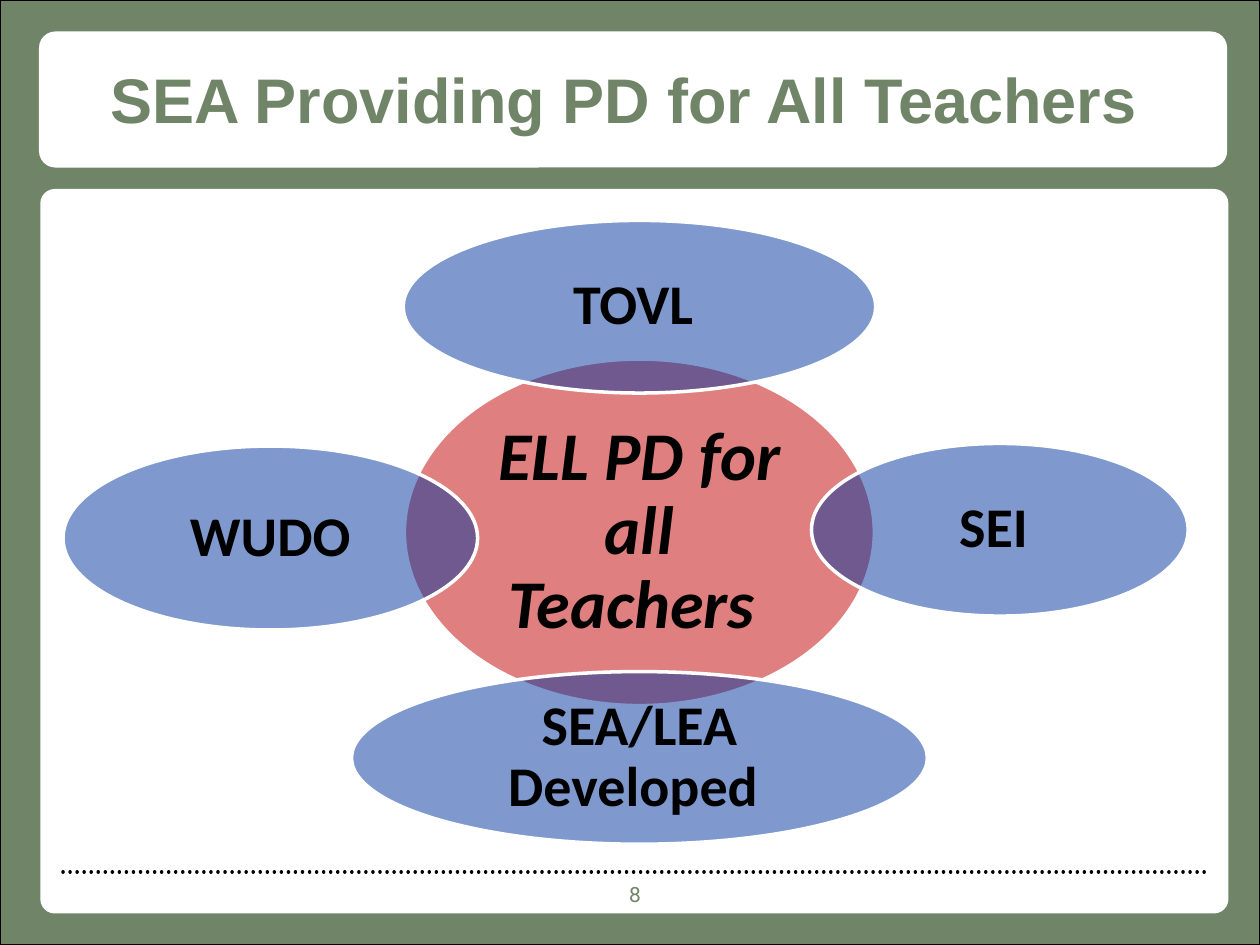
"""Build the slide on teacher training: four overlapping ellipses around a centre."""
from lxml import etree
from pptx import Presentation, util as u
from pptx.dml.color import RGBColor
from pptx.enum import dml, shapes, text
from pptx.oxml.ns import qn

COLORS = {"green": "708468", "white": "FFFFFF", "black": "000000", "red": "C00000", "blue": "00349E"}
PANELS = [
    (shapes.MSO_SHAPE.RECTANGLE, (0, 0, 100, 100), "green", None),
    (shapes.MSO_SHAPE.ROUNDED_RECTANGLE, (3.1, 3.33, 94.3, 14.4), "white", 0.12),
    (shapes.MSO_SHAPE.ROUNDED_RECTANGLE, (3.2, 20, 94.3, 76.67), "white", 0.02),
]
LABELS = [
    ("8", (5, 92.67, 90.8, 4), 12, "Roboto", False, 1),
    ("SEA Providing PD for All Teachers ", (3.3, 4.27, 93.8, 13.73), 36, "Arial", True, 0.8),
]
ELLIPSES = [
    ("ELL PD for all Teachers ", (32.1, 38, 37.3, 36.67), "red", 39, 0.05),
    ("TOVL ", (32, 23.33, 37.5, 18.27), "blue", 32, 0.04),
    ("SEI ", (64.4, 46.93, 29.9, 18.27), "blue", 32, 0.04),
    ("SEA/LEA Developed ", (27.9, 71.07, 45.7, 18.27), "blue", 32, 0.04),
    ("WUDO", (5, 47.2, 32.9, 19.47), "blue", 32, 0.04),
]

prs = Presentation()
prs.slide_width, prs.slide_height = u.Inches(10), u.Inches(7.5)
s = prs.slides.add_slide(prs.slide_layouts[6])
col, row = prs.slide_width / 100, prs.slide_height / 100


def place(x, y, w, h):
    return [u.Emu(round(v)) for v in (x * col, y * row, w * col, h * row)]


def write(sp, words, size, font, color, spacing, bold=True, italic=False):
    tf = sp.text_frame
    tf.word_wrap = True
    tf.vertical_anchor = text.MSO_ANCHOR.MIDDLE
    p = tf.paragraphs[0]
    p.text = words
    p.alignment = text.PP_ALIGN.CENTER
    p.line_spacing = spacing
    f = p.runs[0].font
    f.size, f.name, f.bold, f.italic = u.Pt(size), font, bold, italic
    f.color.rgb = RGBColor.from_string(COLORS[color])


for kind, box, color, radius in PANELS:
    sp = s.shapes.add_shape(kind, *place(*box))
    sp.shadow.inherit = False
    sp.fill.solid()
    sp.fill.fore_color.rgb = RGBColor.from_string(COLORS[color])
    if radius is None:
        sp.line.color.rgb = RGBColor.from_string(COLORS["black"])
        sp.line.width = u.Pt(0.75)
    else:
        sp.adjustments[0] = radius
        sp.line.fill.background()

x, y, w, h = place(5, 92.27, 90.8, 0)
rule = s.shapes.add_connector(shapes.MSO_CONNECTOR.STRAIGHT, x, y, x + w, y)
rule.line.color.rgb = RGBColor.from_string(COLORS["black"])
rule.line.width = u.Pt(2)
rule.line.dash_style = dml.MSO_LINE.ROUND_DOT
rule._element.spPr.find(qn("a:ln")).set("cap", "rnd")
etree.SubElement(rule._element.spPr, qn("a:effectLst"))

for words, box, size, font, bold, spacing in LABELS:
    write(s.shapes.add_textbox(*place(*box)), words, size, font, "green", spacing, bold)

for words, box, color, size, inset in ELLIPSES:
    sp = s.shapes.add_shape(shapes.MSO_SHAPE.OVAL, *place(*box))
    sp.shadow.inherit = False
    sp.fill.solid()
    sp.fill.fore_color.rgb = RGBColor.from_string(COLORS[color])
    tint = sp._element.spPr.find(qn("a:solidFill")).find(qn("a:srgbClr"))
    etree.SubElement(tint, qn("a:alpha")).set("val", "50000")
    sp.line.color.rgb = RGBColor.from_string(COLORS["white"])
    sp.line.width = u.Pt(2)
    tf = sp.text_frame
    tf.margin_left = tf.margin_right = tf.margin_top = tf.margin_bottom = u.Inches(inset)
    write(sp, words, size, "Calibri", "black", 0.9, italic=color == "red")

prs.save("out.pptx")
